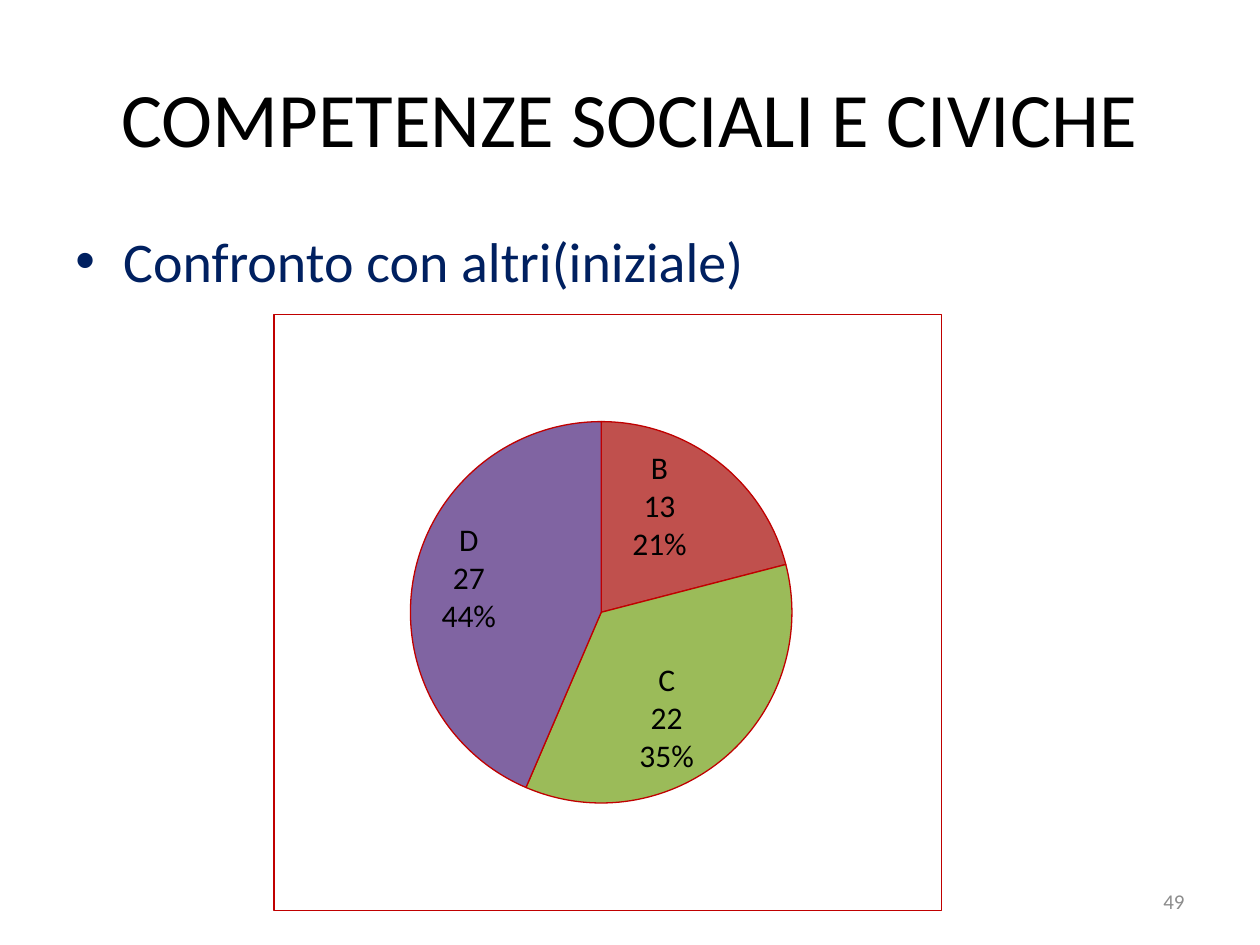
from pptx import Presentation, oxml, util as u
from pptx.chart import data
from pptx.dml import color
from pptx.enum import chart as ec, text
from pptx.oxml import ns

Inches, Pt, RGB = u.Inches, u.Pt, color.RGBColor
FONT = "Calibri"
BLACK, NAVY, GREY = RGB(0, 0, 0), RGB(0x00, 0x20, 0x60), RGB(0x8C, 0x8C, 0x8C)
BORDER = RGB(0xC0, 0x00, 0x00)
SLICES = {
    "A": (0, RGB(0x4F, 0x81, 0xBD)),
    "B": (13, RGB(0xC0, 0x50, 0x4D)),
    "C": (22, RGB(0x9B, 0xBB, 0x59)),
    "D": (27, RGB(0x80, 0x64, 0xA2)),
}
LABEL_SHIFTS = {1: (-0.04, -0.03), 2: (-0.04, 0.04), 3: (0.03, -0.09)}


def xml(source):
    """Parse chart or drawing XML, declaring its namespaces."""
    return oxml.parse_xml(source.replace(">", f" {ns.nsdecls('c', 'a')}>", 1))


def write(sp, content, size, rgb, align=text.PP_ALIGN.LEFT, anchor=text.MSO_ANCHOR.TOP):
    """Write one formatted paragraph into a shape and return it."""
    tf = sp.text_frame
    tf.word_wrap = True
    tf.vertical_anchor = anchor
    p = tf.paragraphs[0]
    p.alignment = align
    r = p.add_run()
    r.text = content
    r.font.name, r.font.size, r.font.color.rgb = FONT, Pt(size), rgb
    return p


def add_title(s, left, top, width, height):
    """Place the title in the given box."""
    sp = s.shapes.title
    sp.left, sp.top, sp.width, sp.height = left, top, width, height
    write(sp, "COMPETENZE SOCIALI E CIVICHE", 44, BLACK,
          text.PP_ALIGN.CENTER, text.MSO_ANCHOR.MIDDLE)


def add_body(s, *box):
    """Place the bulleted line in the given box."""
    p = write(s.shapes.add_textbox(*box), "Confronto con altri(iniziale)", 32, NAVY)
    p.space_before = Pt(6.4)
    pPr = p._p.get_or_add_pPr()
    pPr.set("marL", str(Inches(0.38)))
    pPr.set("indent", str(-Inches(0.38)))
    pPr.append(xml('<a:buFont typeface="Arial"></a:buFont>'))
    pPr.append(xml('<a:buChar char="•"></a:buChar>'))


def add_number(s, *box):
    """Place the slide number in the given box."""
    write(s.shapes.add_textbox(*box), "49", 12, GREY,
          text.PP_ALIGN.RIGHT, text.MSO_ANCHOR.MIDDLE)


def format_labels(series):
    """Show category, value and percentage on every slice that is not empty."""
    shown = {"LegendKey": 0, "Val": 1, "CatName": 1, "SerName": 0, "Percent": 1, "BubbleSize": 0}
    flags = "".join(f'<c:show{name} val="{on}"/>' for name, on in shown.items())
    settings = f'<c:dLblPos val="inEnd"/>{flags}<c:separator>\n</c:separator>'
    labels = "".join(
        f'<c:dLbl><c:idx val="{i}"/><c:layout><c:manualLayout><c:x val="{x}"/>'
        f'<c:y val="{y}"/></c:manualLayout></c:layout>{settings}</c:dLbl>'
        for i, (x, y) in LABEL_SHIFTS.items())
    old = series.data_labels._element
    old.getparent().replace(old, xml(
        '<c:dLbls><c:dLbl><c:idx val="0"/><c:delete val="1"/></c:dLbl>'
        f'{labels}{settings}<c:showLeaderLines val="0"/></c:dLbls>'))


def frame_chart(chart):
    """Outline the chart and set the place of the pie inside it."""
    root = chart.element
    root.find(ns.qn("c:chart")).addnext(xml(
        f'<c:spPr><a:noFill/><a:ln w="{Pt(0.75)}"><a:solidFill>'
        f'<a:srgbClr val="{BORDER}"/></a:solidFill></a:ln></c:spPr>'))
    plot_area = root.find(".//" + ns.qn("c:plotArea"))
    old = plot_area.find(ns.qn("c:layout"))
    if old is not None:
        plot_area.remove(old)
    place = {"x": 0.2, "y": 0.18, "w": 0.58, "h": 0.64}
    modes = '<c:xMode val="edge"/><c:yMode val="edge"/>'
    sizes = "".join(f'<c:{key} val="{value}"/>' for key, value in place.items())
    plot_area.insert(0, xml(
        '<c:layout><c:manualLayout><c:layoutTarget val="inner"/>'
        f"{modes}{sizes}</c:manualLayout></c:layout>"))


def add_pie(s, *box):
    """Place the pie chart in the given box."""
    cd = data.CategoryChartData()
    cd.categories = list(SLICES)
    cd.add_series("Series 1", [value for value, _ in SLICES.values()])
    chart = s.shapes.add_chart(ec.XL_CHART_TYPE.PIE, *box, cd).chart
    chart.has_legend = chart.has_title = False
    chart.font.name, chart.font.size, chart.font.color.rgb = FONT, Pt(18), BLACK
    chart.plots[0].vary_by_categories = True
    series = chart.plots[0].series[0]
    for i, (_, rgb) in enumerate(SLICES.values()):
        fmt = series.points[i].format
        fmt.fill.solid()
        fmt.fill.fore_color.rgb = rgb
        fmt.line.color.rgb, fmt.line.width = BORDER, Pt(0.75)
    format_labels(series)
    frame_chart(chart)


def main():
    """Build and save the slide."""
    prs = Presentation()
    prs.slide_width, prs.slide_height = Inches(10), Inches(7.5)
    s = prs.slides.add_slide(prs.slide_layouts[5])
    add_title(s, Inches(0.5), Inches(0.3), Inches(9), Inches(1.25))
    add_body(s, Inches(0.5), Inches(1.75), Inches(9), Inches(4.95))
    add_number(s, Inches(7.17), Inches(6.95), Inches(2.33), Inches(0.4))
    add_pie(s, Inches(2.17), Inches(2.49), Inches(5.31), Inches(4.74))
    prs.save("out.pptx")


if __name__ == "__main__":
    main()
